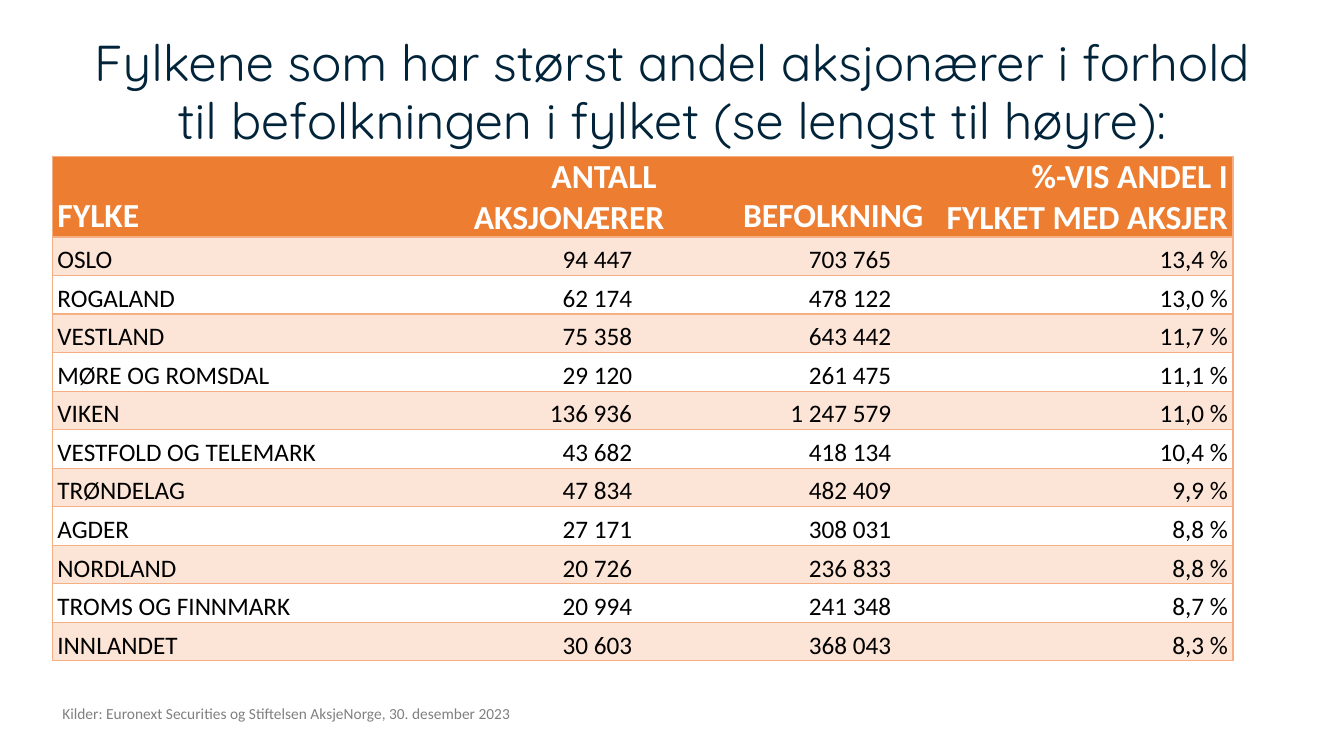
from dataclasses import dataclass

from lxml.etree import SubElement
from pptx import Presentation
from pptx.dml.color import RGBColor
from pptx.enum.text import MSO_ANCHOR, MSO_AUTO_SIZE, PP_ALIGN
from pptx.oxml.ns import qn
from pptx.table import _Cell
from pptx.text.text import TextFrame
from pptx.util import Emu, Inches, Pt

W, H = Inches(13.33), Inches(7.5)
NO_STYLE = "{2D5ABB26-0587-4C30-8999-92F81FD0307C}"
ORANGE, PEACH, EDGE = "ED7D31", "FCE4D6", "F4B084"
HEADER_ROW, BODY_ROW = 10.27, 5.1


@dataclass(frozen=True)
class Box:
    left: float
    top: float
    width: float
    height: float

    def emu(self) -> tuple[Emu, Emu, Emu, Emu]:
        return across(self.left), down(self.top), across(self.width), down(self.height)


@dataclass(frozen=True)
class Column:
    heading: str
    width: float
    align: PP_ALIGN
    body_inset: float


@dataclass(frozen=True)
class County:
    name: str
    shareholders: str
    population: str
    share: str

    def values(self) -> tuple[str, ...]:
        return self.name, self.shareholders, self.population, self.share


COLUMNS = [
    Column("FYLKE", 26.63, PP_ALIGN.LEFT, 0.05),
    Column("ANTALL \vAKSJONÆRER", 19.28, PP_ALIGN.RIGHT, 0.37),
    Column("BEFOLKNING", 19.28, PP_ALIGN.RIGHT, 0.37),
    Column("%-VIS ANDEL I FYLKET MED AKSJER", 22.66, PP_ALIGN.RIGHT, 0.05),
]
COUNTIES = [
    County("OSLO", "94 447", "703 765", "13,4 %"),
    County("ROGALAND", "62 174", "478 122", "13,0 %"),
    County("VESTLAND", "75 358", "643 442", "11,7 %"),
    County("MØRE OG ROMSDAL", "29 120", "261 475", "11,1 %"),
    County("VIKEN", "136 936", "1 247 579", "11,0 %"),
    County("VESTFOLD OG TELEMARK", "43 682", "418 134", "10,4 %"),
    County("TRØNDELAG", "47 834", "482 409", "9,9 %"),
    County("AGDER", "27 171", "308 031", "8,8 %"),
    County("NORDLAND", "20 726", "236 833", "8,8 %"),
    County("TROMS OG FINNMARK", "20 994", "241 348", "8,7 %"),
    County("INNLANDET", "30 603", "368 043", "8,3 %"),
]
TITLE_FONT = {"name": "Quicksand", "size": Pt(36), "bold": False}
HEADER_FONT = {"name": "Calibri", "size": Pt(24), "bold": True}
BODY_FONT = {"name": "Calibri", "size": Pt(18), "bold": False}
SOURCE_FONT = {"name": "Calibri", "size": Pt(11), "bold": False}


def across(percent: float) -> Emu:
    return Emu(round(W * percent / 100))


def down(percent: float) -> Emu:
    return Emu(round(H * percent / 100))


def rgb(value: str) -> RGBColor:
    return RGBColor.from_string(value)


def write(tf: TextFrame, text: str, font: dict, color: str, align: PP_ALIGN) -> None:
    tf.word_wrap = True
    p = tf.paragraphs[0]
    p.text = text
    p.alignment = align
    for r in p.runs:
        for name, value in font.items():
            setattr(r.font, name, value)
        r.font.color.rgb = rgb(color)


def add_borders(cell: _Cell, sides: list[str]) -> None:
    tc_pr = cell._tc.get_or_add_tcPr()
    for i, side in enumerate(sides):
        ln = tc_pr.makeelement(qn(f"a:ln{side}"), {"w": str(Pt(1))})
        fill = SubElement(ln, qn("a:solidFill"))
        SubElement(fill, qn("a:srgbClr"), val=EDGE)
        tc_pr.insert(i, ln)


def fill_cell(cell: _Cell, text: str, row: int, col: int) -> None:
    column, header = COLUMNS[col], row == 0
    inset = 0.05 if header else column.body_inset
    layout = {
        "vertical_anchor": MSO_ANCHOR.BOTTOM,
        "margin_left": Inches(0.05),
        "margin_right": Inches(inset),
        "margin_top": 0,
        "margin_bottom": 0,
    }
    for name, value in layout.items():
        setattr(cell, name, value)
    if header or row % 2:
        cell.fill.solid()
        cell.fill.fore_color.rgb = rgb(ORANGE if header else PEACH)
    else:
        cell.fill.background()
    font, color = (HEADER_FONT, "FFFFFF") if header else (BODY_FONT, "000000")
    write(cell.text_frame, text, font, color, column.align)
    outer = {0: ["L"], len(COLUMNS) - 1: ["R"]}.get(col, [])
    add_borders(cell, outer + ["T", "B"])


def add_county_table(s) -> None:
    rows = [tuple(c.heading for c in COLUMNS)] + [c.values() for c in COUNTIES]
    heights = [HEADER_ROW] + [BODY_ROW] * len(COUNTIES)
    box = Box(3.9, 20.67, sum(c.width for c in COLUMNS), sum(heights))
    table = s.shapes.add_table(len(rows), len(COLUMNS), *box.emu()).table
    table._tbl.tblPr.find(qn("a:tableStyleId")).text = NO_STYLE
    table.first_row = table.horz_banding = False
    for col, column in enumerate(COLUMNS):
        table.columns[col].width = across(column.width)
    for row, (height, values) in enumerate(zip(heights, rows)):
        table.rows[row].height = down(height)
        for col, text in enumerate(values):
            fill_cell(table.cell(row, col), text, row, col)


def add_title(s, text: str) -> None:
    sp = s.shapes.title
    sp.left, sp.top, sp.width, sp.height = Box(5, 4, 90, 16.67).emu()
    tf = sp.text_frame
    write(tf, text, TITLE_FONT, "02243A", PP_ALIGN.CENTER)
    tf.auto_size = MSO_AUTO_SIZE.NONE
    tf.vertical_anchor = MSO_ANCHOR.MIDDLE
    tf.paragraphs[0].line_spacing = 0.95


def add_source(s, text: str) -> None:
    sp = s.shapes.add_textbox(*Box(3.9, 92.53, 36.31, 3.87).emu())
    write(sp.text_frame, text, SOURCE_FONT, "808080", PP_ALIGN.LEFT)


def main() -> None:
    prs = Presentation()
    prs.slide_width, prs.slide_height = W, H
    s = prs.slides.add_slide(prs.slide_layouts[5])
    add_source(s, "Kilder: Euronext Securities og Stiftelsen AksjeNorge, 30. desember 2023")
    add_title(s, "Fylkene som har størst andel aksjonærer i forhold til befolkningen "
                 "i fylket (se lengst til høyre):")
    add_county_table(s)
    prs.save("out.pptx")


if __name__ == "__main__":
    main()
